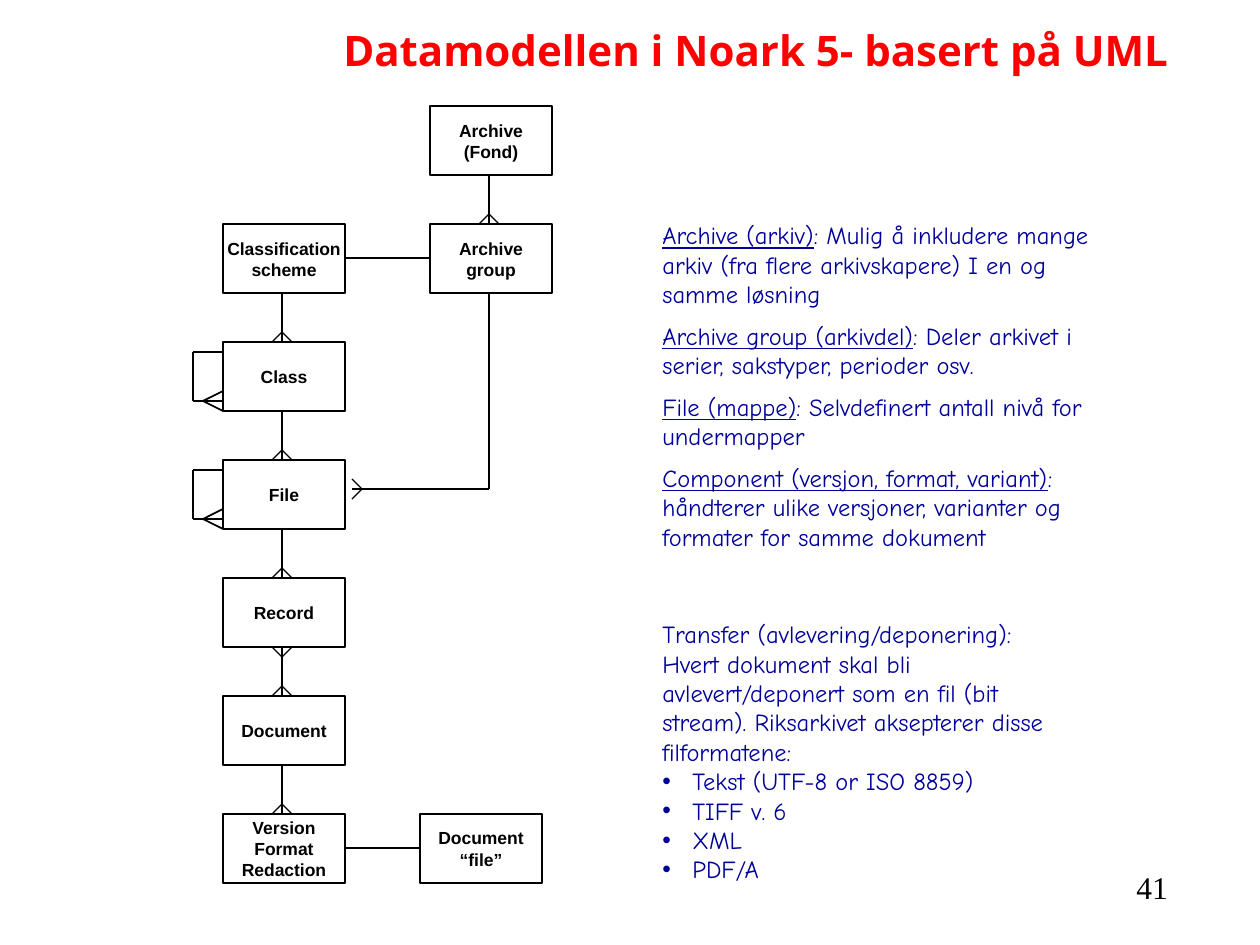
from lxml import etree
from pptx import Presentation
from pptx.dml.color import RGBColor
from pptx.enum.shapes import MSO_CONNECTOR, MSO_SHAPE
from pptx.enum.text import MSO_ANCHOR, PP_ALIGN
from pptx.oxml.ns import qn
from pptx.util import Emu, Pt

RECT = MSO_SHAPE.RECTANGLE
STRAIGHT = MSO_CONNECTOR.STRAIGHT
TOP, MIDDLE = MSO_ANCHOR.TOP, MSO_ANCHOR.MIDDLE
LEFT, CENTER, RIGHT = PP_ALIGN.LEFT, PP_ALIGN.CENTER, PP_ALIGN.RIGHT

RED = RGBColor(0xFF, 0x00, 0x00)
NAVY = RGBColor(0x00, 0x00, 0x99)
BLACK = RGBColor(0x00, 0x00, 0x00)
WHITE = RGBColor(0xFF, 0xFF, 0xFF)

BOX_W, BOX_H, PITCH = 122, 69, 118
FOOT = 10
THIN, MEDIUM = 0.75, 1

COLUMN = ["Classification\nscheme", "Class", "File", "Record", "Document",
          "Version\nFormat\nRedaction"]
DEFINITIONS = [
    ("Archive (arkiv)", ": Mulig å inkludere mange arkiv (fra flere arkivskapere) I en og samme løsning"),
    ("Archive group (arkivdel)", ": Deler arkivet i serier, sakstyper, perioder osv."),
    ("File (mappe)", ": Selvdefinert antall nivå for undermapper"),
    ("Component (versjon, format, variant)",
     ": håndterer ulike versjoner, varianter og formater for samme dokument"),
]
TRANSFER = ("Transfer (avlevering/deponering): Hvert dokument skal bli avlevert/deponert som en fil "
            "(bit stream). Riksarkivet aksepterer disse filformatene:")
FORMATS = ["Tekst (UTF-8 or ISO 8859)", "TIFF v. 6", "XML", "PDF/A"]


def px(n):
    """Turn pixels at 126 to the inch into EMU."""
    return Emu(round(n * 914400 / 126))


def style(p, name, size, color, bold=False, align=LEFT):
    """Format a paragraph and its runs."""
    p.alignment = align
    for r in p.runs:
        r.font.name, r.font.size, r.font.bold = name, Pt(size), bold
        r.font.color.rgb = color


def text_box(s, x, y, w, h):
    """Add a wrapping text box and return its text frame."""
    tf = s.shapes.add_textbox(px(x), px(y), px(w), px(h)).text_frame
    tf.word_wrap = True
    return tf


def line(s, x1, y1, x2, y2, width=THIN):
    """Draw a straight black line without shadow."""
    cn = s.shapes.add_connector(STRAIGHT, px(x1), px(y1), px(x2), px(y2))
    cn.line.color.rgb = BLACK
    cn.line.width = Pt(width)
    etree.SubElement(cn._element.spPr, qn("a:effectLst"))


def foot_down(s, x, edge, apex):
    """Draw a crow's foot that spreads out on a horizontal edge."""
    for side in (-FOOT, FOOT):
        line(s, x, apex, x + side, edge)


def foot_across(s, edge, apex, y, width=THIN):
    """Draw a crow's foot that spreads out on a vertical edge."""
    for side in (-FOOT, FOOT):
        line(s, apex, y, edge, y + side, width)


def entity(s, x, y, label):
    """Draw one entity box with its centred label."""
    sp = s.shapes.add_shape(RECT, px(x), px(y), px(BOX_W), px(BOX_H))
    sp.shadow.inherit = False
    sp.fill.solid()
    sp.fill.fore_color.rgb = WHITE
    sp.line.color.rgb = BLACK
    sp.line.width = Pt(THIN)
    tf = sp.text_frame
    tf.text = label
    tf.word_wrap = False
    tf.vertical_anchor = MIDDLE
    for p in tf.paragraphs:
        style(p, "Arial", 10, BLACK, True, CENTER)


def one_to_many(s, x, y):
    """Link the entity at height y to the one a row below."""
    end = y + PITCH
    line(s, x, y + BOX_H, x, end)
    foot_down(s, x, end, end - FOOT)


def self_link(s, x, y):
    """Loop an entity at x, y back to itself on its left side."""
    left, top, bottom = x - 30, y + 10, y + BOX_H - 10
    line(s, left, top, left, bottom, MEDIUM)
    line(s, left, top, x, top, MEDIUM)
    line(s, left, bottom, x, bottom, MEDIUM)
    foot_across(s, x, x - 20, bottom, MEDIUM)


def diagram(s, x, y):
    """Draw the data model with its top left corner at x, y."""
    col, archive, document_file = x + 30, x + 237, x + 227
    stem, archive_stem = col + 59, archive + 59
    rows = [y + PITCH * i for i in range(1, len(COLUMN) + 1)]
    scheme, class_, file, record, document, version = rows
    mid = BOX_H // 2

    entity(s, archive, y, "Archive\n(Fond)")
    entity(s, archive, scheme, "Archive\ngroup")
    entity(s, document_file, version, "Document\n“file”")
    for row, label in zip(rows, COLUMN):
        entity(s, col, row, label)

    one_to_many(s, archive_stem, y)
    for row in rows[:-1]:
        one_to_many(s, stem, row)
    foot_down(s, stem, record + BOX_H, record + BOX_H + FOOT)
    for row in (class_, file):
        self_link(s, col, row)

    right = col + BOX_W
    line(s, right, scheme + mid, archive, scheme + mid)
    line(s, right, version + mid, document_file, version + mid)
    turn = file + 29
    line(s, archive_stem, scheme + BOX_H, archive_stem, turn)
    line(s, archive_stem, turn, right + 7, turn)
    foot_across(s, right + 7, right + 17, turn)


def title(s, x, y, w, h):
    """Fill and place the title placeholder."""
    sp = s.shapes.title
    sp.left, sp.top, sp.width, sp.height = px(x), px(y), px(w), px(h)
    tf = sp.text_frame
    tf.text = "Datamodellen i Noark 5- basert på UML"
    tf.vertical_anchor = TOP
    style(tf.paragraphs[0], "Open Sans", 24, RED, True, RIGHT)


def definitions(s, x, y, w, h):
    """Write the underlined terms with their explanations."""
    tf = text_box(s, x, y, w, h)
    for i, (term, meaning) in enumerate(DEFINITIONS):
        p = tf.add_paragraph() if i else tf.paragraphs[0]
        if i:
            p.space_before = Pt(7)
        for text in (term, meaning):
            p.add_run().text = text
        style(p, "Comic Neue", 14, NAVY)
        p.runs[0].font.underline = True


def transfer(s, x, y, w, h):
    """Write the transfer rule and the bulleted file formats."""
    tf = text_box(s, x, y, w, h)
    tf.text = "\n".join([TRANSFER] + FORMATS)
    for p in tf.paragraphs[1:]:
        pPr = p._p.get_or_add_pPr()
        pPr.set("marL", str(px(30)))
        pPr.set("indent", str(-px(30)))
        etree.SubElement(pPr, qn("a:buFont"), typeface="Arial")
        etree.SubElement(pPr, qn("a:buChar"), char="•")
    for p in tf.paragraphs:
        style(p, "Comic Neue", 14, NAVY)


def page_number(s, x, y, w, h):
    """Write the page number on a single line."""
    tf = text_box(s, x, y, w, h)
    tf.text = "41"
    style(tf.paragraphs[0], "Times New Roman", 18, BLACK)


def main():
    """Build and save the slide."""
    prs = Presentation()
    prs.slide_width, prs.slide_height = px(1260), px(945)
    s = prs.slides.add_slide(prs.slide_layouts[5])
    title(s, 65, 18, 1116, 125)
    diagram(s, 193, 106)
    definitions(s, 650, 214, 462, 384)
    transfer(s, 650, 613, 430, 280)
    page_number(s, 1124, 862, 73, 50)
    prs.save("out.pptx")


if __name__ == "__main__":
    main()
